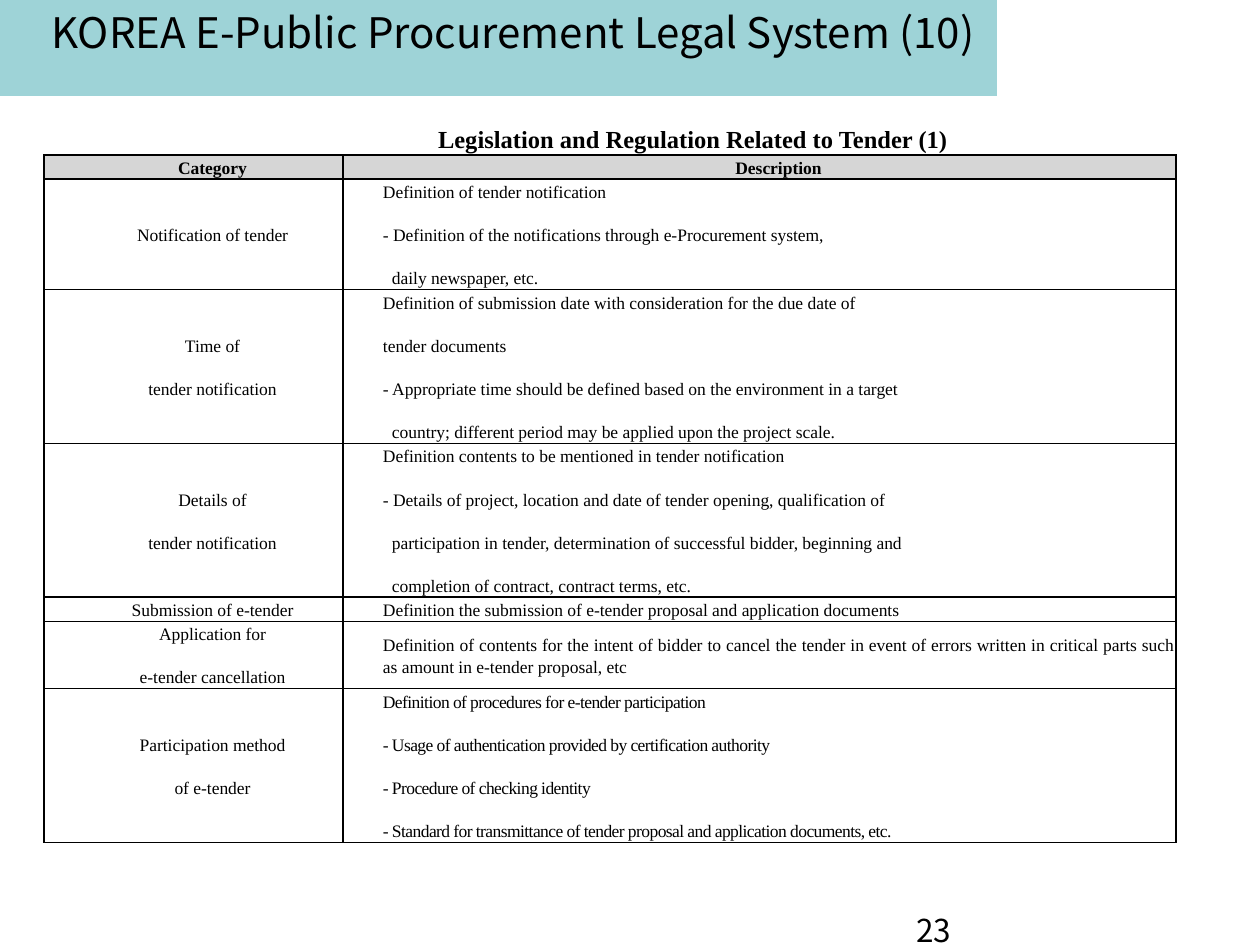
from lxml import etree
from pptx import Presentation
from pptx import util as u
from pptx.dml.color import RGBColor
from pptx.enum import shapes, text
from pptx.oxml import ns

SCALE = 914400 / 126
HUES = {"ink": "000000", "band": "9ED3D7", "head": "D6D6D6"}
SANS, SERIF = "Noto Sans CJK KR", "Times New Roman"
MID, LEFT, FULL = text.PP_ALIGN.CENTER, text.PP_ALIGN.LEFT, text.PP_ALIGN.JUSTIFY
TOP = text.MSO_ANCHOR.TOP

COLS = [299, 833]
# Row height, category lines, description lines; ">" marks a continued line
ROWS = [
    (24, ["Category"], ["Description"]),
    (110, ["Notification of tender"],
     ["Definition of tender notification",
      "- Definition of the notifications through e-Procurement system,",
      ">daily newspaper, etc."]),
    (153, ["Time of", "tender notification"],
     ["Definition of submission date with consideration for the due date of",
      "tender documents",
      "- Appropriate time should be defined based on the environment in a target",
      ">country; different period may be applied upon the project scale."]),
    (153, ["Details of", "tender notification"],
     ["Definition contents to be mentioned in tender notification",
      "- Details of project, location and date of tender opening, qualification of",
      ">participation in tender, determination of successful bidder, beginning and",
      ">completion of contract, contract terms, etc."]),
    (24, ["Submission of e-tender"],
     ["Definition the submission of e-tender proposal and application documents"]),
    (67, ["Application for", "e-tender cancellation"],
     ["Definition of contents for the intent of bidder to cancel the tender in event "
      "of errors written in critical parts such as amount in e-tender proposal, etc"]),
    (153, ["Participation method", "of e-tender"],
     ["Definition of procedures for e-tender participation",
      "- Usage of authentication provided by certification authority",
      "- Procedure of checking identity",
      "- Standard for transmittance of tender proposal and application documents, etc."]),
]


def px(n):
    return u.Emu(round(n * SCALE))


def hue(name):
    return RGBColor.from_string(HUES[name])


def put(obj, **vals):
    """Set each named attribute of obj."""
    for key, val in vals.items():
        setattr(obj, key, val)


def style(font, face, size, bold=False):
    put(font, name=face, size=u.Pt(size), bold=bold)
    font.color.rgb = hue("ink")


def label(shape, box, words, face, size, align=LEFT, bold=False, **frame):
    """Place a one-line text shape in its box."""
    for key, val in zip(("left", "top", "width", "height"), box):
        setattr(shape, key, px(val))
    put(shape.text_frame, word_wrap=True, auto_size=text.MSO_AUTO_SIZE.NONE,
        vertical_anchor=TOP, **frame)
    para = shape.text_frame.paragraphs[0]
    para.text, para.alignment = words, align
    style(para.runs[0].font, face, size, bold)


def banner(slide, box):
    x, y, w, h = box
    band = slide.shapes.add_shape(shapes.MSO_SHAPE.RECTANGLE, *map(px, box))
    band.shadow.inherit = False
    band.fill.solid()
    band.fill.fore_color.rgb = hue("band")
    band.line.fill.background()
    slide.shapes._spTree.insert(2, band._element)
    label(slide.shapes.title, (x - 54, y, w + 137, h - 20),
          "KOREA E-Public Procurement Legal System (10)", SANS, 24, MID)


def edge(cell):
    """Rule all four sides of a cell."""
    props = cell._tc.get_or_add_tcPr()
    for i, side in enumerate(("lnL", "lnR", "lnT", "lnB")):
        line = etree.Element(ns.qn("a:" + side), w=str(u.Pt(1)))
        fill = etree.SubElement(line, ns.qn("a:solidFill"))
        etree.SubElement(fill, ns.qn("a:srgbClr"), val=HUES["ink"])
        props.insert(i, line)


def write(cell, lines, align, bold, tight):
    put(cell, margin_left=px(2), margin_right=px(2), margin_top=px(1),
        margin_bottom=px(1), vertical_anchor=text.MSO_ANCHOR.MIDDLE)
    frame = cell.text_frame
    for i, line in enumerate(lines):
        para = frame.add_paragraph() if i else frame.paragraphs[0]
        props = para._p.get_or_add_pPr()
        props.set("marL", str(px(38)))
        props.set("indent", str(px(9 if line.startswith(">") else 0)))
        put(para, alignment=align, line_spacing=1.15, space_before=u.Pt(12 if i else 0))
        run = para.add_run()
        run.text = line.lstrip(">")
        style(run.font, SERIF, 10, bold)
        if tight:
            run._r.get_or_add_rPr().set("spc", "-30")


def grid(slide, x, y):
    high = [row[0] for row in ROWS]
    table = slide.shapes.add_table(len(ROWS), len(COLS), px(x), px(y),
                                   px(sum(COLS)), px(sum(high))).table
    put(table, first_row=False, horz_banding=False)
    for col, wide in zip(table.columns, COLS):
        col.width = px(wide)
    for r, (tall, *cells) in enumerate(ROWS):
        table.rows[r].height = px(tall)
        for c, lines in enumerate(cells):
            cell = table.cell(r, c)
            head = r == 0
            tight = c == 1 and r == len(ROWS) - 1
            write(cell, lines, FULL if c and not head else MID, head, tight)
            if head:
                cell.fill.solid()
                cell.fill.fore_color.rgb = hue("head")
            else:
                cell.fill.background()
            edge(cell)


def caption(slide, box, words, face, size, **form):
    label(slide.shapes.add_textbox(*map(px, box)), box, words, face, size, **form)


def main():
    deck = Presentation()
    put(deck, slide_width=px(1260), slide_height=px(945))
    slide = deck.slides.add_slide(deck.slide_layouts[5])
    banner(slide, (0, 0, 997, 96))
    caption(slide, (904, 905, 293, 40), "23", SANS, 18)
    grid(slide, 44, 155)
    caption(slide, (174, 116, 873, 72), "Legislation and Regulation Related to Tender (1)",
            SERIF, 14, bold=True, margin_left=px(264), margin_top=px(8))
    deck.save("out.pptx")


if __name__ == "__main__":
    main()
